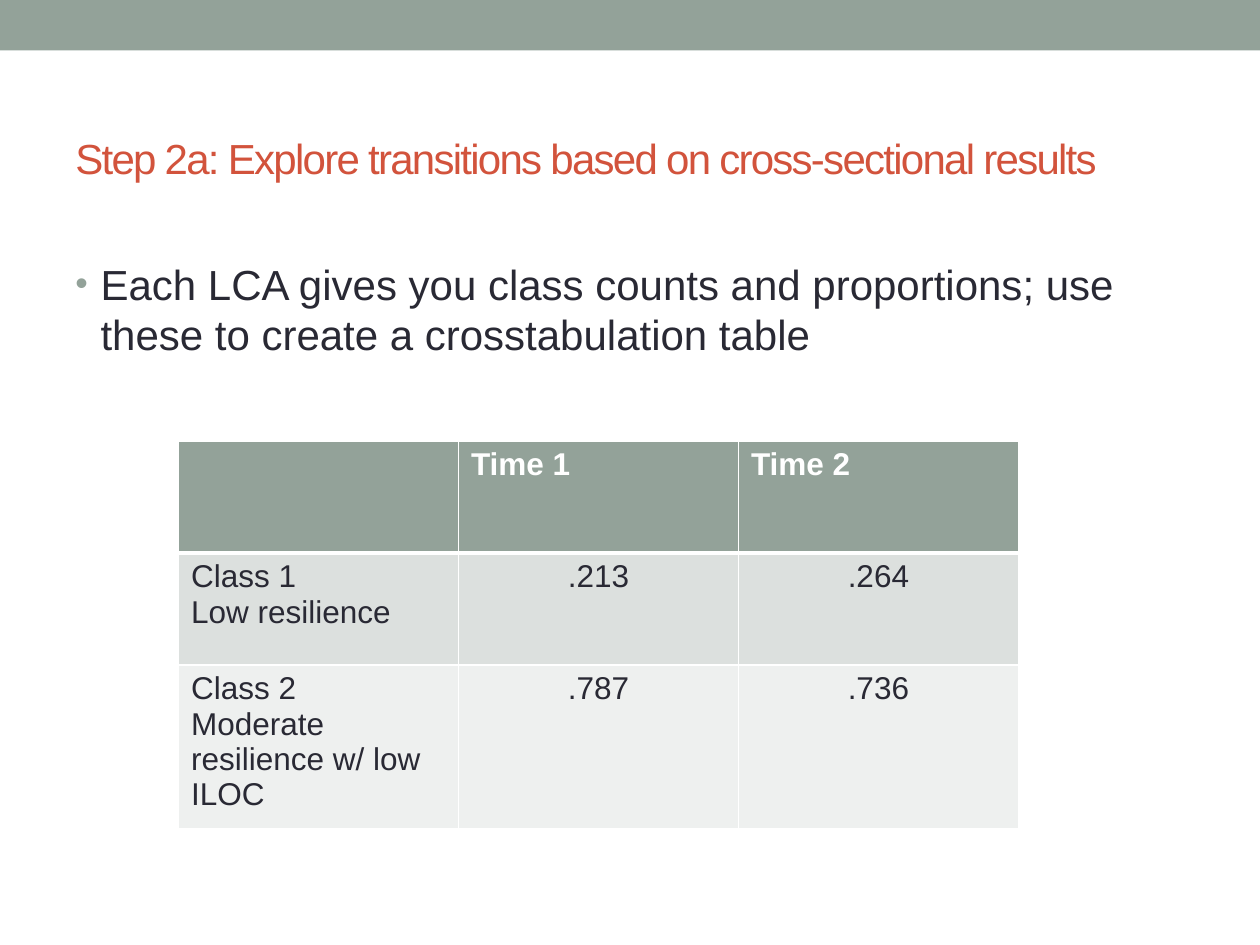
from dataclasses import dataclass

from lxml import etree
from pptx import Presentation
from pptx.dml.color import RGBColor
from pptx.enum import shapes, text
from pptx.oxml.ns import qn
from pptx.util import Pt


@dataclass(frozen=True)
class Theme:
    font: str = "Arial"
    sage: str = "93A299"
    rust: str = "D2533C"
    ink: str = "292934"
    white: str = "FFFFFF"
    bands: tuple = ("DCE0DE", "EEF0EF")
    large: int = 24
    small: int = 18


T = Theme()
ROWS = [
    ["", "Time 1", "Time 2"],
    ["Class 1\nLow resilience", ".213", ".264"],
    ["Class 2\nModerate resilience w/ low ILOC", ".787", ".736"],
]


def paint(obj, color):
    obj.fill.solid()
    obj.fill.fore_color.rgb = RGBColor.from_string(color)


def style(para, size, color, bold=False):
    font = para.font
    font.name, font.size, font.bold = T.font, Pt(size), bold
    font.color.rgb = RGBColor.from_string(color)


def add_text(slide, box, words, color, anchor):
    frame = slide.shapes.add_textbox(*map(Pt, box)).text_frame
    frame.word_wrap = True
    frame.vertical_anchor = anchor
    para = frame.paragraphs[0]
    para.text = words
    style(para, T.large, color)
    return para


def add_band(slide, box):
    band = slide.shapes.add_shape(shapes.MSO_SHAPE.RECTANGLE, *map(Pt, box))
    band.shadow.inherit = False
    paint(band, T.sage)
    band.line.fill.background()


def add_title(slide, box, words):
    para = add_text(slide, box, words, T.rust, text.MSO_ANCHOR.MIDDLE)
    # Tighten the letters by one point
    para.runs[0].font._element.set("spc", "-100")


def add_bullet(slide, box, words):
    para = add_text(slide, box, words, T.ink, text.MSO_ANCHOR.TOP)
    para.space_before = Pt(3)
    props = para._p.get_or_add_pPr()
    props.set("marL", str(Pt(14.4)))
    props.set("indent", str(-Pt(14.4)))
    # Bullet colour, size and sign
    color = etree.SubElement(props, qn("a:buClr"))
    etree.SubElement(color, qn("a:srgbClr"), val=T.sage)
    etree.SubElement(props, qn("a:buSzPct"), val="85000")
    etree.SubElement(props, qn("a:buFont"), typeface=T.font)
    etree.SubElement(props, qn("a:buChar"), char="•")
    # Schema order: bullet marks come before the run defaults
    props.append(props.find(qn("a:defRPr")))


def add_edges(cell, head):
    props = cell._tc.get_or_add_tcPr()
    for spot, side in enumerate("LRTB"):
        width = 3 if head and side == "B" else 1
        line = etree.Element(qn(f"a:ln{side}"), w=str(Pt(width)))
        fill = etree.SubElement(line, qn("a:solidFill"))
        etree.SubElement(fill, qn("a:srgbClr"), val=T.white)
        props.insert(spot, line)


def add_grid(slide, box, rows):
    count, width = len(rows), len(rows[0])
    grid = slide.shapes.add_table(count, width, *map(Pt, box)).table
    for r, row in enumerate(rows):
        head = r == 0
        for c, words in enumerate(row):
            cell = grid.cell(r, c)
            cell.text = words
            paint(cell, T.sage if head else T.bands[r - 1])
            add_edges(cell, head)
            for para in cell.text_frame.paragraphs:
                style(para, T.small, T.white if head else T.ink, head)
                if not head and c > 0:
                    para.alignment = text.PP_ALIGN.CENTER


def main():
    deck = Presentation()
    deck.slide_width, deck.slide_height = Pt(720), Pt(540)
    slide = deck.slides.add_slide(deck.slide_layouts[6])
    add_band(slide, (0, 0, 720, 28.8))
    add_title(slide, (36, 42, 648, 96),
              "Step 2a: Explore transitions based on cross-sectional results")
    add_bullet(slide, (36, 144, 648, 366),
               "Each LCA gives you class counts and proportions; "
               "use these to create a crosstabulation table")
    add_grid(slide, (102, 252, 480, 192), ROWS)
    deck.save("out.pptx")


if __name__ == "__main__":
    main()
